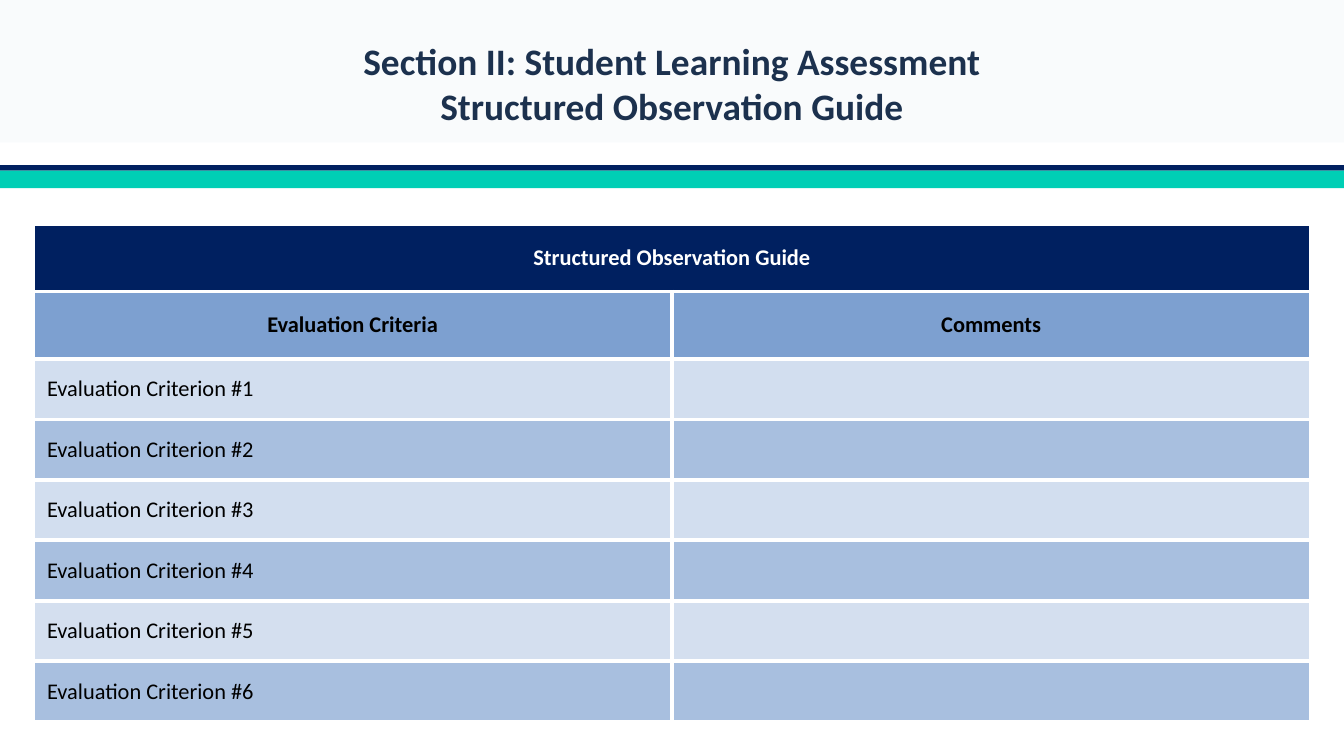
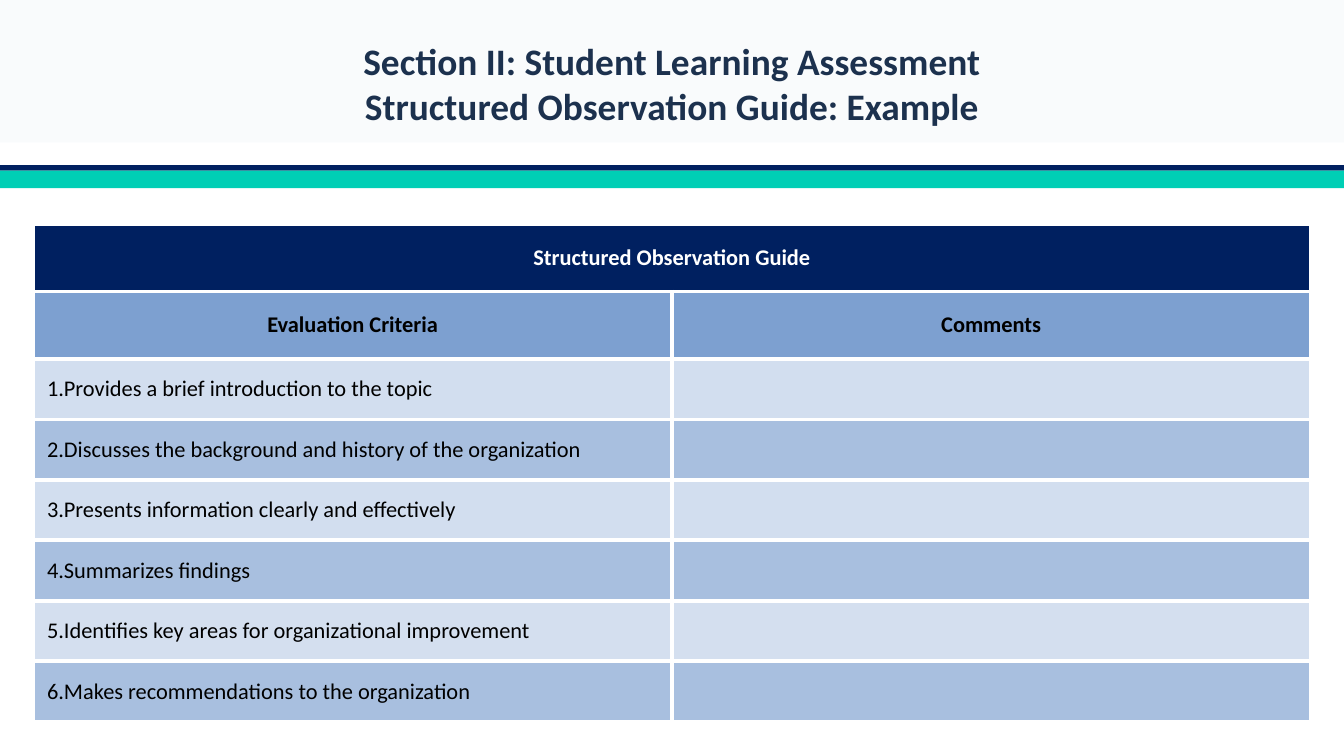
from lxml import etree
from pptx import Presentation
from pptx import util as u
from pptx.dml.color import RGBColor
from pptx.enum import shapes, text
from pptx.oxml import ns

NAVY, TEAL, WHITE, BLACK = "002060", "00CFB5", "FFFFFF", "000000"
TITLE_COLOR, HEADER, PALE, MEDIUM = "1C314E", "7DA0D0", "D2DEEF", "A8BFDF"
ROW_FILLS = [NAVY, HEADER, PALE, MEDIUM, PALE, MEDIUM, "D4DFEF", MEDIUM]
ROW_HEIGHTS = [0.5] * 2 + [0.45] * 6

# Background bands: top, height, colour, opacity in percent
BANDS = [
    (1.23, 0.23, NAVY, 100),
    (1.27, 4.35, WHITE, 100),
    (1.27, 0.13, TEAL, 100),
    (0, 1.06, "E8F0F4", 25),
]

# Second title line, criteria, numbered or not
GUIDES = [
    ("Structured Observation Guide",
     [f"Evaluation Criterion #{number}" for number in range(1, 7)], False),
    ("Structured Observation Guide: Example",
     ["Provides a brief introduction to the topic",
      "Discusses the background and history of the organization",
      "Presents information clearly and effectively",
      "Summarizes findings",
      "Identifies key areas for organizational improvement",
      "Makes recommendations to the organization"], True),
]


def paint(fill, color):
    fill.solid()
    fill.fore_color.rgb = RGBColor.from_string(color)


def write(frame, *lines, size=12, color=BLACK, bold=False,
          align=text.PP_ALIGN.LEFT, number=None):
    for index, line in enumerate(lines):
        para = frame.paragraphs[0] if index == 0 else frame.add_paragraph()
        para.alignment = align
        span = para.add_run()
        span.text = line
        span.font.name, span.font.size, span.font.bold = "Calibri", u.Pt(size), bold
        paint(span.font.fill, color)
        if number:
            props = para._p.get_or_add_pPr()
            props.set("marL", "0")
            props.set("indent", str(u.Inches(-0.2)))
            etree.SubElement(props, ns.qn("a:buAutoNum"),
                             type="arabicPeriod", startAt=str(number))


# Widescreen deck, 16:9
deck = Presentation()
deck.slide_width = u.Inches(10)
deck.slide_height = deck.slide_width * 9 // 16

for subtitle, criteria, numbered in GUIDES:
    page = deck.slides.add_slide(deck.slide_layouts[5])

    # Background bands
    for top, height, color, opacity in BANDS:
        band = page.shapes.add_shape(
            shapes.MSO_SHAPE.RECTANGLE, 0, u.Inches(top), deck.slide_width, u.Inches(height))
        band.shadow.inherit = False
        band.line.fill.background()
        paint(band.fill, color)
        if opacity < 100:
            tint = band.element.spPr.find(".//" + ns.qn("a:srgbClr"))
            etree.SubElement(tint, ns.qn("a:alpha"), val=str(opacity * 1000))

    # Observation table
    table = page.shapes.add_table(
        8, 2, u.Inches(0.25), u.Inches(1.67), u.Inches(9.5), u.Inches(3.7)).table
    table.first_row = table.horz_banding = False
    table.cell(0, 0).merge(table.cell(0, 1))
    rows = [["Structured Observation Guide", ""], ["Evaluation Criteria", "Comments"]]
    rows += [[criterion, ""] for criterion in criteria]

    for row, labels in enumerate(rows):
        table.rows[row].height = u.Inches(ROW_HEIGHTS[row])
        for column, label in enumerate(labels):
            cell = table.cell(row, column)
            cell.vertical_anchor = text.MSO_ANCHOR.MIDDLE
            for side in ("a:lnL", "a:lnR", "a:lnT", "a:lnB"):
                border = etree.SubElement(
                    cell._tc.get_or_add_tcPr(), ns.qn(side), w=str(u.Pt(2.25)))
                solid = etree.SubElement(border, ns.qn("a:solidFill"))
                etree.SubElement(solid, ns.qn("a:srgbClr"), val=WHITE)
            paint(cell.fill, ROW_FILLS[row])
            if not label:
                continue
            if row < 2:
                cell.margin_left = cell.margin_right = u.Inches(0.11)
                write(cell.text_frame, label, bold=True, align=text.PP_ALIGN.CENTER,
                      color=BLACK if row else WHITE)
            else:
                write(cell.text_frame, label, number=row - 1 if numbered else None)

    # Title, in front of the bands
    title = page.shapes.title
    title.element.getparent().append(title.element)
    title.left, title.top = 0, 0
    title.width, title.height = deck.slide_width, u.Inches(1.23)
    frame = title.text_frame
    frame.word_wrap = True
    frame.auto_size = text.MSO_AUTO_SIZE.NONE
    frame.vertical_anchor = text.MSO_ANCHOR.MIDDLE
    frame.margin_left = frame.margin_right = frame.margin_top = frame.margin_bottom = 0
    write(frame, "Section II: Student Learning Assessment", subtitle,
          size=20, color=TITLE_COLOR, bold=True, align=text.PP_ALIGN.CENTER)

deck.save("out.pptx")
